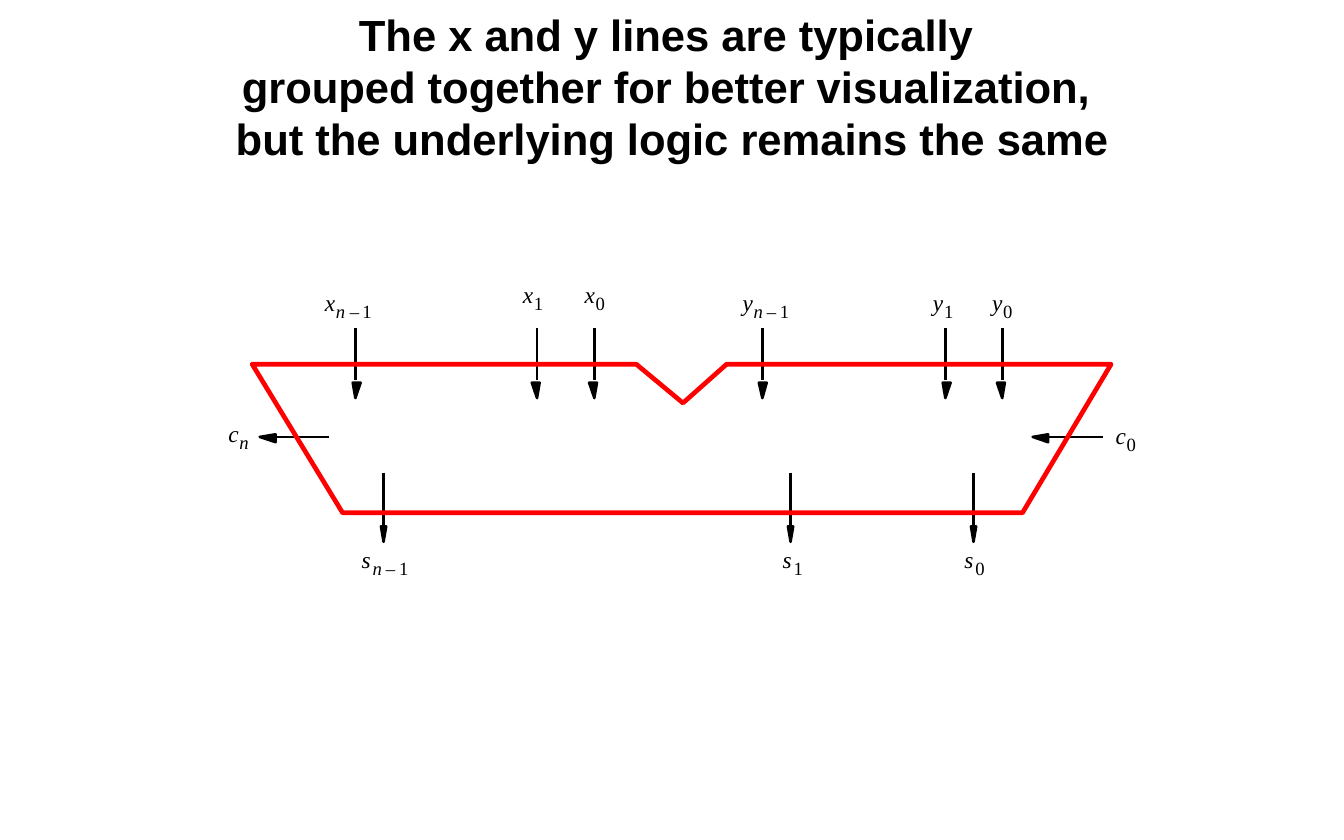
"""Build a slide showing an n-bit adder with its x and y inputs grouped."""
from lxml import etree
from pptx import Presentation
from pptx.dml.color import RGBColor
from pptx.enum.shapes import MSO_CONNECTOR
from pptx.enum.text import MSO_ANCHOR, MSO_AUTO_SIZE, PP_ALIGN
from pptx.oxml.ns import qn
from pptx.util import Cm, Pt

STRAIGHT = MSO_CONNECTOR.STRAIGHT
TOP = MSO_ANCHOR.TOP
GROW = MSO_AUTO_SIZE.SHAPE_TO_FIT_TEXT
FIXED = MSO_AUTO_SIZE.NONE
CENTER = PP_ALIGN.CENTER
LEFT = PP_ALIGN.LEFT

BLACK, RED = "000000", "FF0000"
WIRE_WIDTH, BODY_WIDTH = 1.63, 3

TITLE = [
    "The x and y lines are typically ",
    "grouped together for better visualization, ",
    "but the underlying logic remains the same",
]
SIGNALS = [
    ("x", ("n –", "1"), 7.37, 6.53),
    ("x", ("1",), 11.86, 6.35),
    ("x", ("0",), 13.26, 6.35),
    ("y", ("n", "–", "1"), 16.84, 6.53),
    ("y", ("1",), 21.16, 6.53),
    ("y", ("0",), 22.5, 6.53),
    ("s", ("n", "–", "1"), 8.2, 12.37),
    ("s", ("1",), 17.75, 12.37),
    ("s", ("0",), 21.87, 12.37),
    ("c", ("n",), 5.18, 9.5),
    ("c", ("0",), 25.3, 9.55),
]
SYMBOL_WIDTHS = {"x": 0.4, "y": 0.4, "s": 0.33, "c": 0.38}
SUBSCRIPT_STEP, SUBSCRIPT_DROP = 0.3, 0.27

INPUT_SPAN = (7.44, 8.61, 8.68, 9.03)
OUTPUT_SPAN = (10.72, 11.94, 11.94, 12.29)
INPUTS = [(8.06, 0.06, 0.12), (12.18, 0.12, 0.06), (13.48, 0.12, 0.06),
          (17.29, 0.08, 0.1), (21.44, 0.06, 0.12), (22.73, 0.12, 0.06)]
OUTPUTS = [(8.7, 0.06, 0.06), (17.93, 0.06, 0.06), (22.08, 0.06, 0.06)]
CARRY = (9.91, 0.06, 0.12)
CARRY_SPANS = [(7.47, 6.25, 6.25, 5.89), (25.02, 23.77, 23.77, 23.42)]
ADDER_BODY = [(7.77, 11.63), (23.19, 11.63), (25.2, 8.26), (16.48, 8.26),
              (15.49, 9.14), (14.43, 8.26), (5.72, 8.26)]

TITLE_FRAME = {"word_wrap": True, "auto_size": FIXED, "vertical_anchor": TOP,
               "margin_top": Cm(0.2)}
LABEL_FRAME = {"word_wrap": False, "auto_size": GROW, "vertical_anchor": TOP,
               "margin_left": 0, "margin_right": 0,
               "margin_top": 0, "margin_bottom": 0}
TITLE_FONT = {"name": "Arial", "size": Pt(28), "bold": True}
SYMBOL_FONT = {"name": "Times New Roman", "size": Pt(15), "italic": True}
SUBSCRIPT_FONT = {"name": "Times New Roman", "size": Pt(12)}


def color(hex_string):
    return RGBColor.from_string(hex_string)


def apply(target, values):
    for attribute, value in values.items():
        setattr(target, attribute, value)


def add_text(slide, lines, box, frame_format, font, paragraph_format):
    frame = slide.shapes.add_textbox(*map(Cm, box)).text_frame
    apply(frame, frame_format)
    for index, line in enumerate(lines):
        paragraph = frame.add_paragraph() if index else frame.paragraphs[0]
        apply(paragraph, paragraph_format)
        run = paragraph.add_run()
        run.text = line
        apply(run.font, font)
        run.font.color.rgb = color(BLACK)


def add_label(slide, text, left, top, width, height, font):
    add_text(slide, [text], (left, top, width, height), LABEL_FRAME, font,
             {"alignment": LEFT})


def add_signal(slide, symbol, subscripts, left, top):
    add_label(slide, symbol, left, top, SYMBOL_WIDTHS[symbol], 0.64, SYMBOL_FONT)
    column = 0
    for part in subscripts:
        characters = len(part.replace(" ", ""))
        add_label(slide, part, left + 0.25 + column * SUBSCRIPT_STEP,
                  top + SUBSCRIPT_DROP, 0.53 if characters > 1 else 0.33, 0.51,
                  SUBSCRIPT_FONT | {"italic": "n" in part})
        column += characters


def set_line(shape, hex_string, width):
    shape.line.color.rgb = color(hex_string)
    shape.line.width = Pt(width)


def add_polygon(slide, points, line_color, width, fill_color=None):
    start, *others = [(Cm(x), Cm(y)) for x, y in points]
    builder = slide.shapes.build_freeform(*start)
    builder.add_line_segments(others, close=True)
    polygon = builder.convert_to_shape()
    polygon.shadow.inherit = False
    if fill_color:
        polygon.fill.solid()
        polygon.fill.fore_color.rgb = color(fill_color)
    else:
        polygon.fill.background()
    set_line(polygon, line_color, width)


def add_arrow(slide, span, across, vertical):
    start, end, base, tip = span
    axis, before, after = across
    points = [(base, axis - before), (tip, axis), (base, axis + after),
              (base, axis), (start, axis), (end, axis)]
    if vertical:
        points = [(x, y) for y, x in points]
    *head, wire_start, wire_end = points
    add_polygon(slide, head, BLACK, WIRE_WIDTH, BLACK)
    wire = slide.shapes.add_connector(STRAIGHT, *map(Cm, wire_start + wire_end))
    set_line(wire, BLACK, WIRE_WIDTH)
    etree.SubElement(wire._element.spPr, qn("a:effectLst"))


def main():
    deck = Presentation()
    deck.slide_width, deck.slide_height = Cm(30.48), Cm(19.05)
    slide = deck.slides.add_slide(deck.slide_layouts[6])
    add_text(slide, TITLE, (2.54, 0, 25.4, 4.23), TITLE_FRAME, TITLE_FONT,
             {"alignment": CENTER, "line_spacing": Pt(33.4)})
    for span, wires in ((INPUT_SPAN, INPUTS), (OUTPUT_SPAN, OUTPUTS)):
        for across in wires:
            add_arrow(slide, span, across, vertical=True)
    for span in CARRY_SPANS:
        add_arrow(slide, span, CARRY, vertical=False)
    for signal in SIGNALS:
        add_signal(slide, *signal)
    add_polygon(slide, ADDER_BODY, RED, BODY_WIDTH)
    deck.save("out.pptx")


if __name__ == "__main__":
    main()
